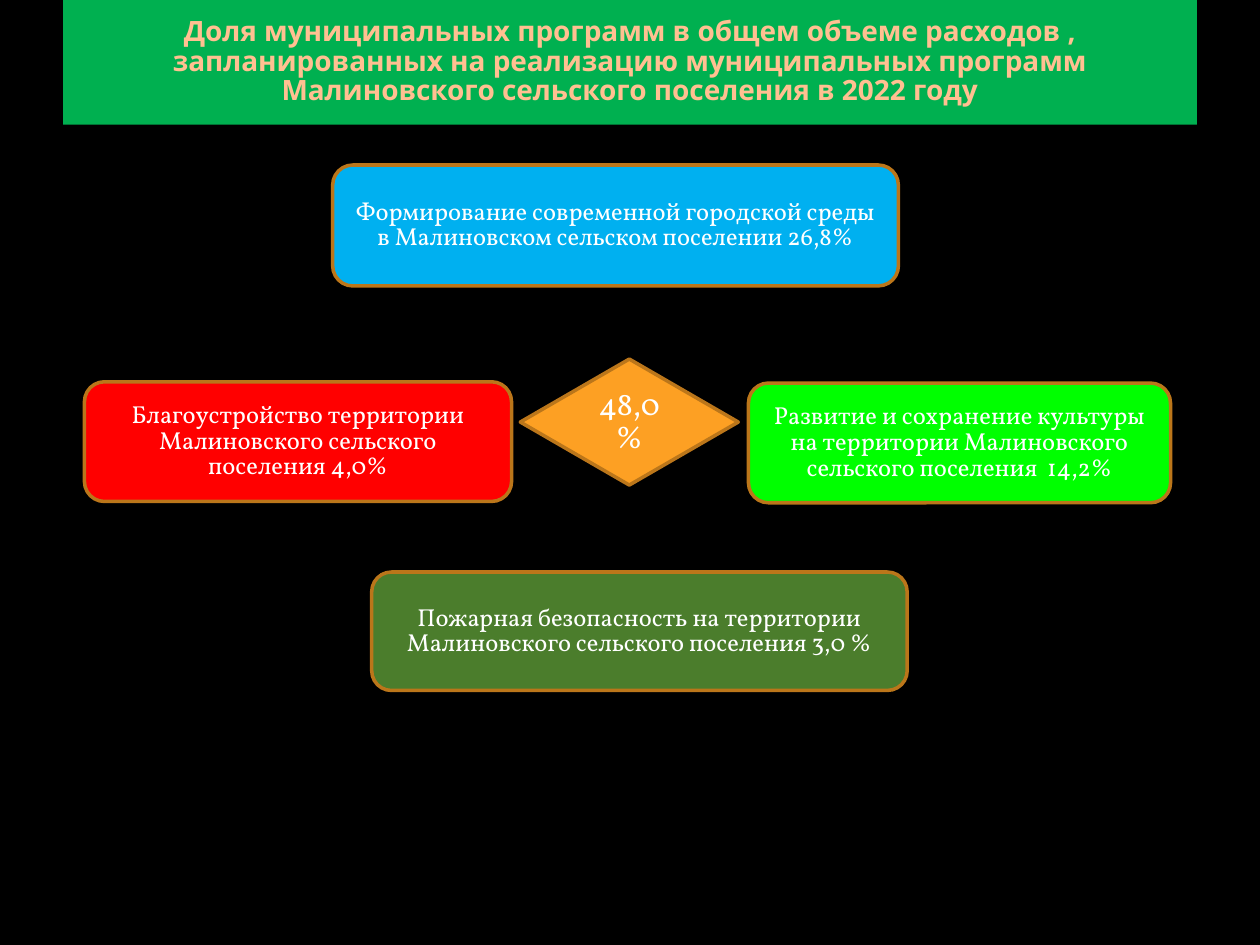
from pptx import Presentation
from pptx.dml.color import RGBColor
from pptx.enum.shapes import MSO_SHAPE
from pptx.enum.text import MSO_ANCHOR, MSO_AUTO_SIZE, PP_ALIGN
from pptx.util import Inches, Pt

COLORS = {
    "back": "000000", "banner": "00B050", "title": "FFC091",
    "edge": "BB761A", "text": "FFFFFF", "total": "FDA023",
    "city": "00B0F0", "land": "FF0000", "culture": "00FF00", "fire": "4B7D2C",
}
TITLE = ("Доля муниципальных программ в общем объеме расходов , "
         "запланированных на реализацию муниципальных программ "
         "Малиновского сельского поселения в 2022 году")
SHARES = [
    ("land", (0.67, 3.03, 3.39, 0.95),
     "Благоустройство территории Малиновского сельского поселения 4,0%"),
    ("culture", (5.94, 3.04, 3.35, 0.95),
     "Развитие и сохранение культуры на территории Малиновского "
     "сельского поселения  14,2%"),
    ("city", (2.64, 1.31, 4.49, 0.96),
     "Формирование современной городской среды в Малиновском "
     "сельском поселении 26,8%"),
    ("fire", (2.95, 4.54, 4.25, 0.94),
     "Пожарная безопасность на территории Малиновского "
     "сельского поселения 3,0 %"),
]


def paint(fill, name):
    fill.solid()
    fill.fore_color.rgb = RGBColor.from_string(COLORS[name])


def write(shape, text, font, size, color, bold=False):
    """Centre one run of text in the shape."""
    frame = shape.text_frame
    frame.word_wrap = True
    frame.auto_size = MSO_AUTO_SIZE.NONE
    frame.vertical_anchor = MSO_ANCHOR.MIDDLE
    para = frame.paragraphs[0]
    para.alignment = PP_ALIGN.CENTER
    para.line_spacing = 0.87
    run = para.add_run()
    run.text = text
    run.font.name = font
    run.font.size = Pt(size)
    run.font.bold = bold
    run.font.color.rgb = RGBColor.from_string(COLORS[color])


def add_title(slide, box):
    title = slide.shapes.title
    title.left, title.top, title.width, title.height = map(Inches, box)
    paint(title.fill, "banner")
    write(title, TITLE, "Noto Sans", 16, "title", True)


def add_block(slide, kind, box, color, text, size):
    block = slide.shapes.add_shape(kind, *map(Inches, box))
    block.shadow.inherit = False
    paint(block.fill, color)
    paint(block.line.fill, "edge")
    block.line.width = Pt(2)
    write(block, text, "Vollkorn", size, "text")


def main():
    deck = Presentation()
    deck.slide_width, deck.slide_height = Inches(10), Inches(7.5)
    slide = deck.slides.add_slide(deck.slide_layouts[5])
    paint(slide.background.fill, "back")
    add_title(slide, (0.5, 0, 9, 0.99))
    for color, box, text in SHARES:
        add_block(slide, MSO_SHAPE.ROUNDED_RECTANGLE, box, color, text, 14)
    add_block(slide, MSO_SHAPE.DIAMOND, (4.13, 2.85, 1.73, 1), "total", "48,0%", 18)
    deck.save("out.pptx")


if __name__ == "__main__":
    main()
